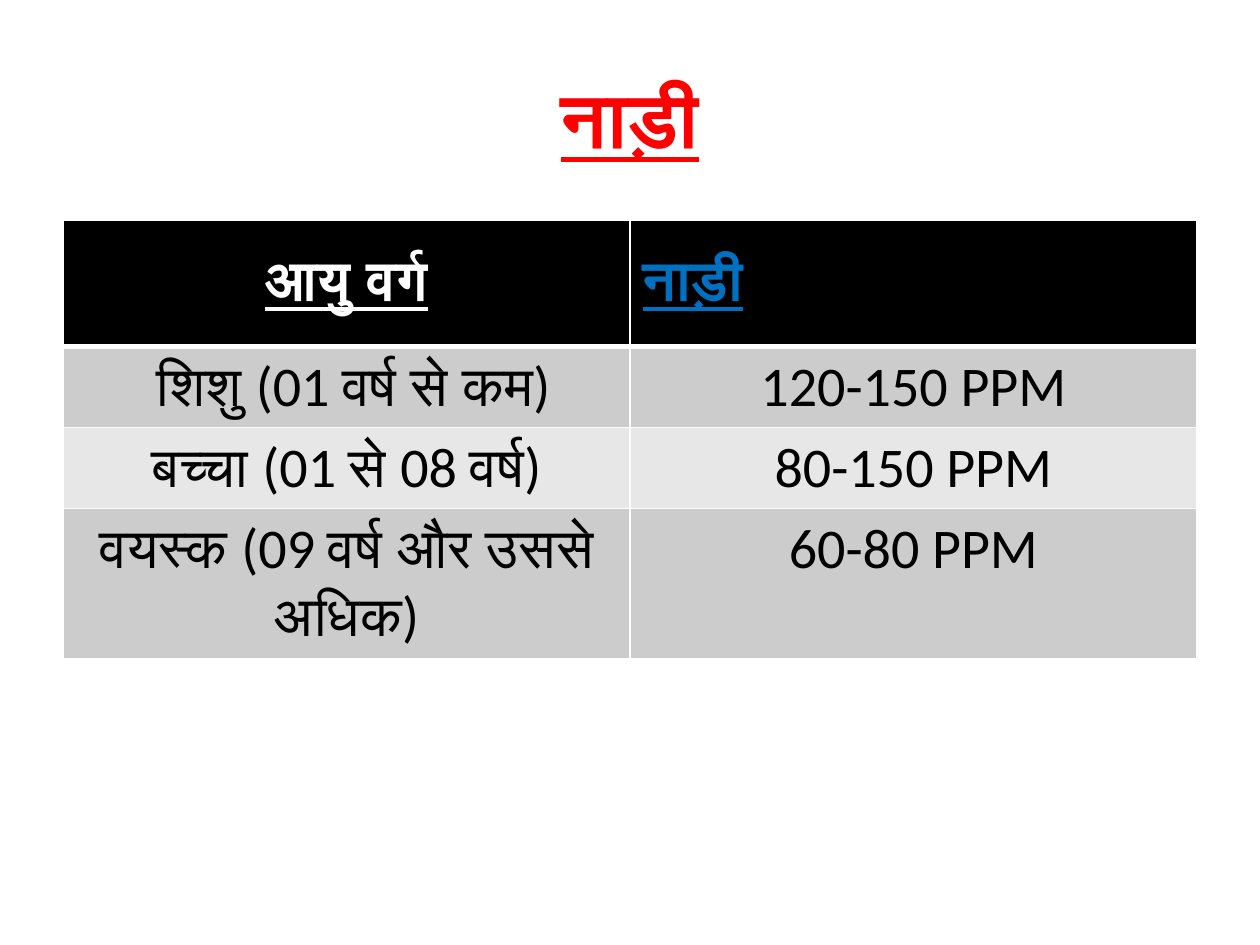
from lxml.etree import SubElement
from pptx import Presentation
from pptx.dml.color import RGBColor
from pptx.enum.text import MSO_ANCHOR as Anchor, PP_ALIGN as Align
from pptx.oxml.ns import qn
from pptx.util import Inches, Pt

FONT = "Calibri"
COLORS = {
    "title": "FF0000", "header": "000000", "header_text": "FFFFFF",
    "pulse": "0070C0", "text": "000000", "border": "FFFFFF",
    "odd": "CCCCCC", "even": "E7E7E7",
}
ROWS = [
    ("आयु वर्ग", "नाड़ी"),
    (" शिशु (01 वर्ष से कम)", "120-150 PPM"),
    ("बच्चा (01 से 08 वर्ष)", "80-150 PPM"),
    ("वयस्क (09 वर्ष और उससे अधिक)", "60-80 PPM"),
]
TOP_ANCHORED = {(1, 1), (3, 1)}


def rgb(name):
    return RGBColor.from_string(COLORS[name])


def write(tf, text, size, color, heading, align=Align.CENTER):
    p = tf.paragraphs[0]
    p.text = text
    p.alignment = align
    font = p.runs[0].font
    font.name, font.size = FONT, Pt(size)
    font.bold = font.underline = heading
    font.color.rgb = rgb(color)


def set_borders(cell, bottom):
    # Border elements come before the fill in the cell properties
    tc_pr = cell._tc.get_or_add_tcPr()
    widths = {"a:lnL": 1, "a:lnR": 1, "a:lnT": 1, "a:lnB": bottom}
    for tag, width in widths.items():
        ln = SubElement(tc_pr, qn(tag), w=str(Pt(width)))
        fill = SubElement(ln, qn("a:solidFill"))
        SubElement(fill, qn("a:srgbClr"), val=COLORS["border"])


def add_title(s, left, top, width, height):
    title = s.shapes.title
    title.left, title.top, title.width, title.height = left, top, width, height
    title.text_frame.vertical_anchor = Anchor.MIDDLE
    write(title.text_frame, "नाड़ी", 44, "title", True)


def add_pulse_table(s, left, top, width, header_height, row_height):
    height = header_height + row_height * (len(ROWS) - 1)
    table = s.shapes.add_table(len(ROWS), 2, left, top, width, height).table
    for i, values in enumerate(ROWS):
        header = i == 0
        table.rows[i].height = header_height if header else row_height
        for j, value in enumerate(values):
            cell = table.cell(i, j)
            set_borders(cell, 3 if header else 1)
            cell.fill.solid()
            cell.fill.fore_color.rgb = rgb("header" if header else "odd" if i % 2 else "even")
            cell.vertical_anchor = Anchor.TOP if (i, j) in TOP_ANCHORED else Anchor.MIDDLE
            color = ("header_text", "pulse")[j] if header else "text"
            align = Align.LEFT if header and j == 1 else Align.CENTER
            write(cell.text_frame, value, 32, color, header, align)


def main():
    prs = Presentation()
    prs.slide_width, prs.slide_height = Inches(10), Inches(7.5)
    s = prs.slides.add_slide(prs.slide_layouts[5])
    # Title
    add_title(s, Inches(0.5), Inches(0.3), Inches(9), Inches(1.25))
    # Pulse rate by age group
    add_pulse_table(s, Inches(0.5), Inches(1.75), Inches(9), Inches(1), Inches(0.41))
    prs.save("out.pptx")


if __name__ == "__main__":
    main()
